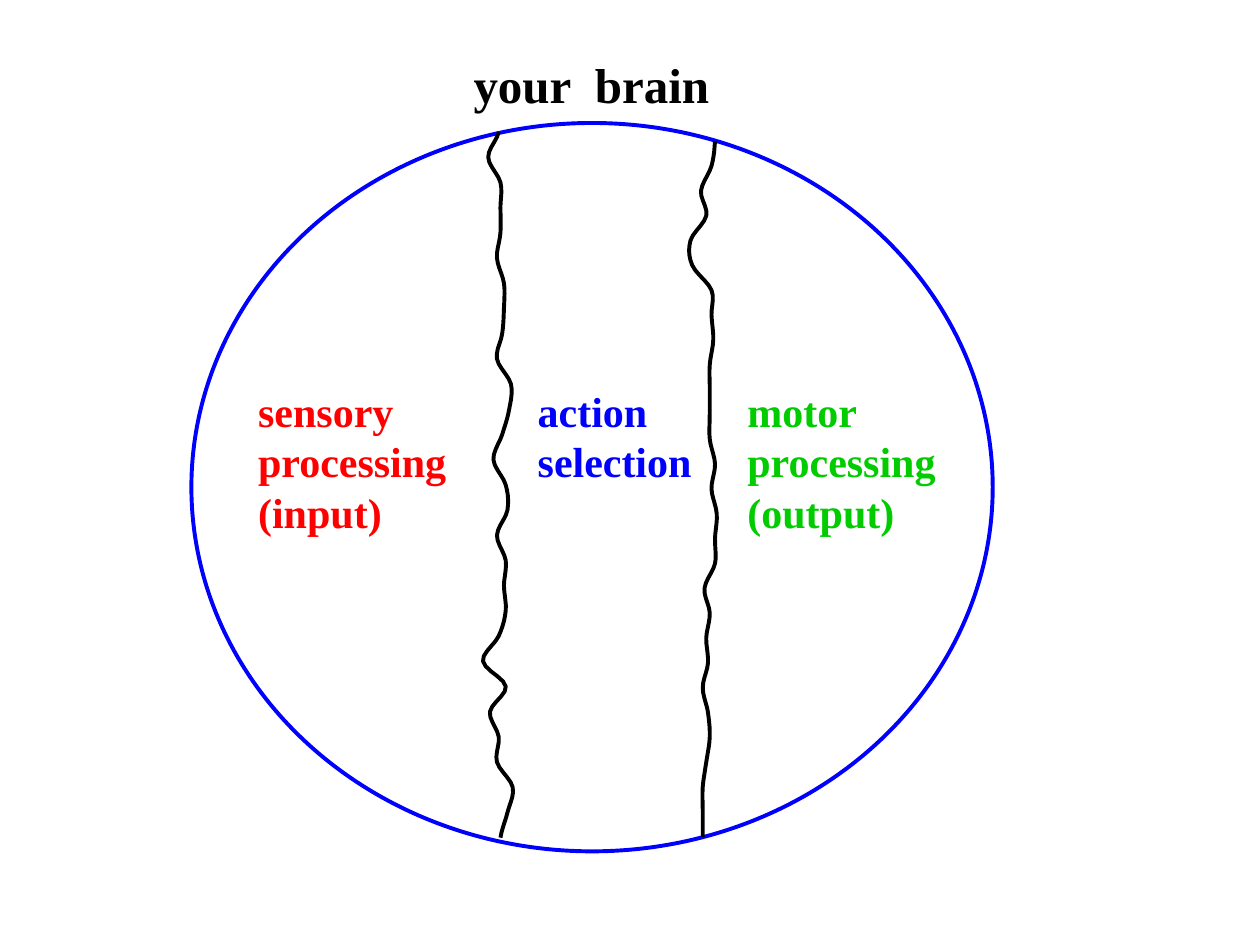
from dataclasses import dataclass
from math import cos, radians, sin

from pptx import Presentation
from pptx.dml.color import RGBColor
from pptx.enum.shapes import MSO_SHAPE
from pptx.enum.text import MSO_AUTO_SIZE
from pptx.util import Pt


@dataclass(frozen=True)
class Theme:
    font: str = "Times New Roman"
    title_size: float = 28
    label_size: float = 24
    line_width: float = 2.25
    ink: RGBColor = RGBColor(0x00, 0x00, 0x00)
    outline: RGBColor = RGBColor(0x00, 0x00, 0xFF)
    sensory: RGBColor = RGBColor(0xFF, 0x00, 0x00)
    action: RGBColor = RGBColor(0x00, 0x00, 0xFF)
    motor: RGBColor = RGBColor(0x00, 0xCC, 0x00)


@dataclass(frozen=True)
class Border:
    spine: float
    top: float
    bottom: float
    sway: tuple

    def center(self):
        return self.spine, (self.top + self.bottom) / 2

    def points(self, steps=5):
        gap = (self.bottom - self.top) / (len(self.sway) - 1)
        padded = (self.sway[0], *self.sway, self.sway[-1])
        for index in range(len(self.sway) - 1):
            for step in range(steps):
                t = step / steps
                offset = smooth(*padded[index:index + 4], t)
                yield self.spine + offset, self.top + (index + t) * gap
        yield self.spine + self.sway[-1], self.bottom


def smooth(before, start, end, after, t):
    return start + t / 2 * (
        end - before
        + t * (2 * before - 5 * start + 4 * end - after)
        + t * t * (3 * (start - end) + after - before))


def rotate(point, center, degrees):
    angle = radians(degrees)
    dx, dy = point[0] - center[0], point[1] - center[1]
    return (center[0] + dx * cos(angle) - dy * sin(angle),
            center[1] + dx * sin(angle) + dy * cos(angle))


class BrainSlide:
    def __init__(self, slide, theme):
        self.slide = slide
        self.theme = theme

    def finish(self, shape, color):
        shape.shadow.inherit = False
        shape.fill.background()
        shape.line.color.rgb = color
        shape.line.width = Pt(self.theme.line_width)

    def ellipse(self, left, top, width, height, color):
        outline = self.slide.shapes.add_shape(
            MSO_SHAPE.OVAL, Pt(left), Pt(top), Pt(width), Pt(height))
        self.finish(outline, color)

    def divider(self, border, tilt, color):
        upright = [rotate(point, border.center(), -tilt)
                   for point in border.points()]
        start, *rest = [(Pt(x), Pt(y)) for x, y in upright]
        builder = self.slide.shapes.build_freeform(*start)
        builder.add_line_segments(rest, close=False)
        line = builder.convert_to_shape()
        line.rotation = tilt
        self.finish(line, color)

    def text(self, left, top, width, height, lines, size, color):
        frame = self.slide.shapes.add_textbox(
            Pt(left), Pt(top), Pt(width), Pt(height)).text_frame
        frame.word_wrap = False
        frame.auto_size = MSO_AUTO_SIZE.SHAPE_TO_FIT_TEXT
        frame.text = "\n".join(lines)
        for paragraph in frame.paragraphs:
            paragraph.font.name = self.theme.font
            paragraph.font.size = Pt(size)
            paragraph.font.bold = True
            paragraph.font.color.rgb = color


BORDER_TILT = -3
SENSORY_BORDER = Border(
    spine=285, top=75.6, bottom=478.8,
    sway=(0, -6, 1, 1, 1, -1, 3, 3, 2, -1, 7, 6, 2, -3, 4,
          5, -1, 4, 3, 4, 0, -9, 4, -5, 0, -1, 8, 5, 1))
MOTOR_BORDER = Border(
    spine=404.6, top=80.6, bottom=478.1,
    sway=(4, 2, -4, -1, -10, -9, 2, 2, 3, 1, 1, 1, 1, 4, 2,
          5, 4, 4, -2, 1, -1, 0, -3, 0, 1, -1, -3, -3, -3))


def main():
    presentation = Presentation()
    presentation.slide_width = Pt(720)
    presentation.slide_height = Pt(540)
    theme = Theme()
    brain = BrainSlide(
        presentation.slides.add_slide(presentation.slide_layouts[6]), theme)

    brain.text(263.5, 27.4, 150.5, 41, ["your  brain"],
               theme.title_size, theme.ink)
    brain.ellipse(109.4, 70.3, 457.9, 416.2, theme.outline)
    for border in (SENSORY_BORDER, MOTOR_BORDER):
        brain.divider(border, BORDER_TILT, theme.ink)

    label_top = 216.7
    for left, width, height, lines, color in [
        (140.4, 123.1, 94.3, ["sensory", "processing", "(input)"], theme.sensory),
        (420, 123.1, 94.3, ["motor", "processing", "(output)"], theme.motor),
        (300.2, 103, 65.5, ["action", "selection"], theme.action),
    ]:
        brain.text(left, label_top, width, height, lines,
                   theme.label_size, color)

    presentation.save("out.pptx")


if __name__ == "__main__":
    main()
